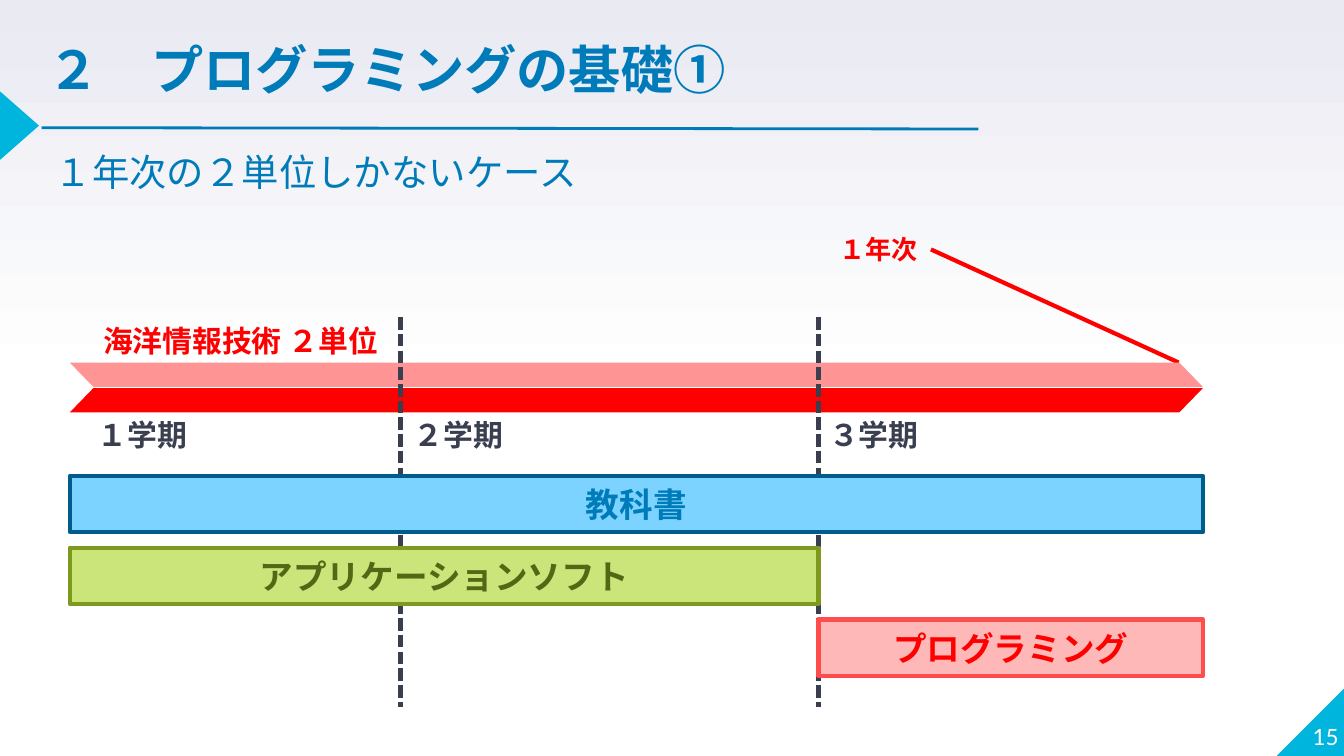
from lxml.etree import SubElement
from pptx import Presentation
from pptx.dml.color import RGBColor
from pptx.enum.dml import MSO_LINE
from pptx.enum.shapes import MSO_CONNECTOR, MSO_SHAPE
from pptx.enum.text import MSO_ANCHOR, MSO_AUTO_SIZE, PP_ALIGN
from pptx.oxml.ns import qn
from pptx.util import Inches, Pt

W = 10
H = W * 9 / 16
CJK = "Noto Sans CJK JP"
C = {"blue": "007BB9", "cyan": "00B5DD", "red": "FF0000", "pink": "FF9494",
     "slate": "3A3F50", "white": "FFFFFF", "haze": "E9EAF2",
     "sky": "7DD3FF", "navy": "005C8B", "lime": "CBE57A", "olive": "7D9A1E",
     "moss": "536714", "rose": "FFB8B8", "coral": "FF4D4D"}
TERMS = [0, 2.46 / 8.43, 5.57 / 8.43, 1]


def rgb(name):
    """Return the named colour."""
    return RGBColor.from_string(C[name])


def write(sp, text, size, color, bold=True, font=CJK, inset=(0.1, 0.05), frame=None, para=None):
    """Put one formatted line of text in a shape."""
    tf = sp.text_frame
    x, y = map(Inches, inset)
    margins = {"margin_left": x, "margin_right": x, "margin_top": y, "margin_bottom": y}
    layout = {"word_wrap": True, "auto_size": MSO_AUTO_SIZE.NONE,
              "vertical_anchor": MSO_ANCHOR.TOP}
    for key, value in {**margins, **layout, **(frame or {})}.items():
        setattr(tf, key, value)
    p = tf.paragraphs[0]
    for key, value in {"alignment": PP_ALIGN.LEFT, **(para or {})}.items():
        setattr(p, key, value)
    r = p.add_run()
    r.text = text
    for key, value in {"name": font, "size": Pt(size), "bold": bold}.items():
        setattr(r.font, key, value)
    r.font.color.rgb = rgb(color)
    SubElement(r.font._element, qn("a:ea"), typeface=CJK)


def label(s, box, *args, **kwargs):
    """Add a text box and return it."""
    sp = s.shapes.add_textbox(*map(Inches, box))
    write(sp, *args, **kwargs)
    return sp


def block(s, kind, box, fill, line=None, flip=False):
    """Add a filled preset shape."""
    sp = s.shapes.add_shape(kind, *map(Inches, box))
    sp.shadow.inherit = False
    sp.fill.solid()
    sp.fill.fore_color.rgb = rgb(fill)
    if line:
        sp.line.color.rgb = rgb(line)
        sp.line.width = Pt(2.25)
    else:
        sp.line.fill.background()
    if flip:
        sp._element.spPr.find(qn("a:xfrm")).set("flipH", "1")
    return sp


def rule(s, start, end, color, width=2.25, dash=None):
    """Add a straight line."""
    cx = s.shapes.add_connector(MSO_CONNECTOR.STRAIGHT, *map(Inches, (*start, *end)))
    cx.line.color.rgb = rgb(color)
    cx.line.width = Pt(width)
    if dash:
        cx.line.dash_style = dash
    SubElement(cx._element.spPr, qn("a:effectLst"))
    return cx


def backdrop(s):
    """Fill the background and place the corner, pointer and page number."""
    fill = s.background.fill
    fill.gradient()
    fill.gradient_angle = 90
    for stop, position, color in zip(fill.gradient_stops, (0.5, 1), ("white", "haze")):
        stop.position = position
        stop.color.rgb = rgb(color)
    side = 0.51
    block(s, MSO_SHAPE.RIGHT_TRIANGLE, (W - side + 0.01, H - side, side, side), "cyan", flip=True)
    pointer = block(s, MSO_SHAPE.ISOSCELES_TRIANGLE, (-0.11, 0.79, side, 0.29), "cyan")
    pointer.rotation = 90
    label(s, (9.46, 5.07, 0.5, side), "15", 12, "white", bold=False, font="Lato", inset=(0, 0),
          frame={"vertical_anchor": MSO_ANCHOR.BOTTOM}, para={"alignment": PP_ALIGN.RIGHT})


def heading(s, box):
    """Place the title, its rule and the subtitle."""
    x, y, w, h = box
    title = s.shapes.title
    for key, value in zip(("left", "top", "width", "height"), box):
        setattr(title, key, Inches(value))
    write(title, "２　プログラミングの基礎①", 28, "blue")
    rule(s, (x + 0.06, y + 0.72), (x + 7.03, y + 0.73), "blue", 1.5)
    label(s, (x + 0.06, y + 0.83, 4.13, 0.44), "１年次の２単位しかないケース", 20, "blue",
          bold=False, frame={"word_wrap": False})


def timeline(s, box):
    """Place the course band, its labels and the term dividers."""
    x, y, w, h = box
    spaced = {"line_spacing": 1.15}
    year = label(s, (x + 0.42 * w, y, 0.34 * w, 0.14 * h), "１年次", 14, "red", font="Arial",
                 inset=(0.1, 0.1),
                 para={**spaced, "alignment": PP_ALIGN.RIGHT, "space_after": Pt(16)})
    label(s, (x + 0.15, y + 0.17 * h, 0.85 * w, 0.15 * h), "海洋情報技術 ２単位", 16, "red",
          font="Arial", inset=(0.1, 0.1), frame={"vertical_anchor": MSO_ANCHOR.BOTTOM},
          para=spaced)
    band = y + 0.3 * h
    leader = rule(s, (x + 0.76 * w, y), (x + w - 0.18, band), "red")
    leader.begin_connect(year, 3)
    for i, color in enumerate(("pink", "red")):
        half = block(s, MSO_SHAPE.PARALLELOGRAM, (x, band + 0.19 * i, w, 0.18), color, flip=i == 0)
        half.adjustments[0] = 0.97
    for share in TERMS[1:3]:
        at = x + share * w
        rule(s, (at, y + 0.76), (at, y + h), "slate", dash=MSO_LINE.SQUARE_DOT)
    for share, shift, text in zip(TERMS, (0.11, 0, -0.02), ("１学期", "２学期", "３学期")):
        label(s, (x + share * w + shift, y + 1.45, 0.88, 0.37), text, 16, "slate",
              frame={"word_wrap": False})


def subjects(s, box):
    """Place one bar a row, each spanning its terms."""
    x, y, w, h = box
    rows = [("教科書", 0, 3, "sky", "navy", "blue"),
            ("アプリケーションソフト", 0, 2, "lime", "olive", "moss"),
            ("プログラミング", 2, 3, "rose", "coral", "red")]
    bar = 0.42
    pitch = (h - bar) / (len(rows) - 1)
    for i, (text, first, last, fill, line, color) in enumerate(rows):
        left, right = TERMS[first] * w, TERMS[last] * w
        sp = block(s, MSO_SHAPE.RECTANGLE, (x + left, y + i * pitch, right - left, bar), fill, line)
        write(sp, text, 18, color, font="Arial", frame={"vertical_anchor": MSO_ANCHOR.MIDDLE},
              para={"alignment": PP_ALIGN.CENTER})


def main():
    """Build and save the slide."""
    prs = Presentation()
    prs.slide_width, prs.slide_height = Inches(W), Inches(H)
    s = prs.slides.add_slide(prs.slide_layouts[5])
    backdrop(s)
    heading(s, (0.25, 0.23, 6.41, 0.57))
    timeline(s, (0.52, 1.6, 8.43, 3.66))
    subjects(s, (0.52, 3.54, 8.43, 1.49))
    prs.save("out.pptx")


if __name__ == "__main__":
    main()
